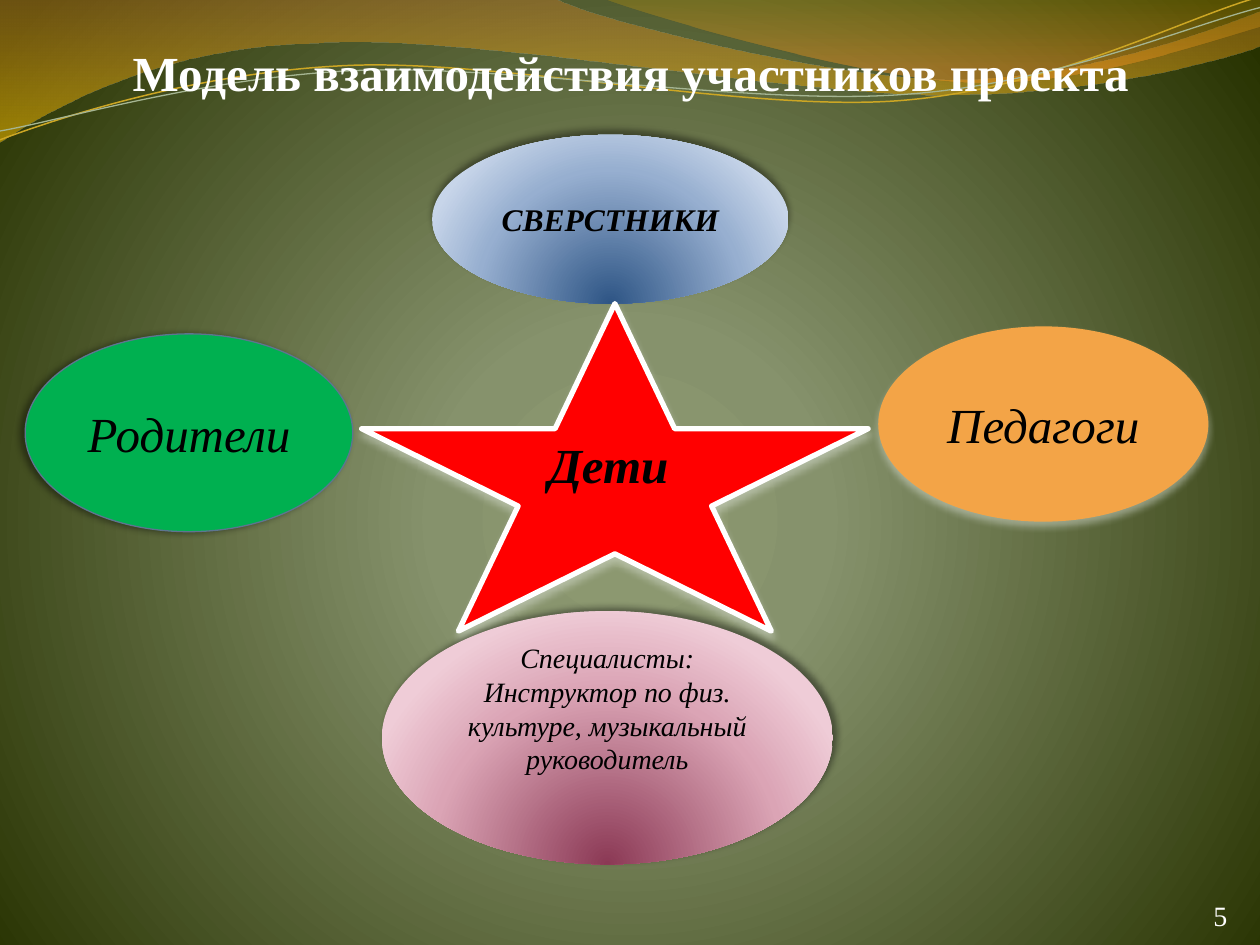
from lxml import etree
from pptx import Presentation
from pptx.dml.color import RGBColor
from pptx.enum import shapes, text
from pptx.oxml.ns import qn
from pptx.util import Inches, Pt

BLACK = RGBColor(0x00, 0x00, 0x00)
WHITE = RGBColor(0xFF, 0xFF, 0xFF)
RED = RGBColor(0xFF, 0x00, 0x00)
GREEN = RGBColor(0x00, 0xB0, 0x50)
ORANGE = RGBColor(0xF3, 0xA4, 0x47)
MIST = RGBColor(0xE0, 0xE6, 0xDC)
SLATE = RGBColor(0x5E, 0x75, 0x90)
GOLD = RGBColor(0xCC, 0xA6, 0x24)
SAGE = RGBColor(0xA5, 0xB5, 0x92)
FONT = "Times New Roman"

# Gradients: stops as (position %, colour, opacity %), then the focus or None
GLOW = (50, 130, 50, -30)
BACKDROP = ([(0, "8F9B72", 100), (25, "86926C", 100), (100, "273200", 100)],
            (10, 110, 10, 100))
BLUE_GLOW = ([(0, "2E5585", 100), (68, "97AFD0", 100), (100, "C7D5E9", 100)], GLOW)
PINK_GLOW = ([(0, "8B3955", 100), (68, "DBA4B5", 100), (100, "EFCCD7", 100)], GLOW)
AMBER = ([(0, "C07A28", 45), (100, "F7BF00", 55)], None)
OLIVE = ([(0, "C09709", 30), (80, "F59320", 45)], None)

# Waves: a start point, then line ends (2 numbers) and Bezier curves (6 numbers)
BANDS = [
    (AMBER, [(0, 0), (4.4, -0.01), (4.76, 0.17, 6.64, 0.63, 7.58, 0.63),
             (8.53, 0.63, 9.58, 0.26, 10, 0.09), (10.01, 0.36),
             (9.83, 0.44, 8.7, 0.76, 7.46, 0.75), (6.22, 0.75, 3.82, 0.28, 2.57, 0.34),
             (1.29, 0.36, 0.46, 0.83, -0.01, 1.13)]),
    (OLIVE, [(4.79, -0.01), (5.09, 0.11, 6.82, 0.62, 7.69, 0.65),
             (8.56, 0.69, 9.61, 0.32, 10, 0.21), (10, 0)]),
]
STRANDS = [
    (GOLD, 0.85, [(0, 1.11), (0.48, 0.93, 1.58, 0.57, 2.77, 0.52),
                  (3.95, 0.47, 5.93, 0.89, 7.13, 0.8), (8.33, 0.71, 9.38, 0.15, 9.98, -0.02)]),
    (SAGE, 0.75, [(0, 1.04), (0.47, 0.96, 1.64, 0.61, 2.83, 0.56),
                  (4.03, 0.51, 5.97, 0.84, 7.17, 0.75), (8.36, 0.67, 9.41, 0.21, 10, 0.06)]),
]

# Participants: shape, place, fill, line, shadow (colour, opacity, blur, angle),
# lines of text, size, bold, anchor, insets (left, top, right, bottom)
OVAL, STAR = shapes.MSO_SHAPE.OVAL, shapes.MSO_SHAPE.STAR_5_POINT
MIDDLE, TOP = text.MSO_ANCHOR.MIDDLE, text.MSO_ANCHOR.TOP
INSETS = (0.1, 0.05, 0.1, 0.05)
PARTICIPANTS = [
    (OVAL, (3.43, 1.07, 2.83, 1.34), BLUE_GLOW, None, (BLACK, 40, 4, 270),
     ["СВЕРСТНИКИ"], 18, True, MIDDLE, INSETS),
    (OVAL, (0.2, 2.65, 2.6, 1.57), GREEN, (SLATE, 0.75), (BLACK, 40, 4, 180),
     ["Родители"], 28, False, MIDDLE, INSETS),
    (OVAL, (6.97, 2.59, 2.62, 1.55), ORANGE, None, (MIST, 48, 4.5, 90),
     ["Педагоги"], 28, False, MIDDLE, INSETS),
    (STAR, (2.87, 2.41, 4.02, 2.6), RED, (WHITE, 3), (MIST, 48, 4.5, 90),
     ["Дети"], 28, True, TOP, (0.1, 0.05, 0.2, 0.05)),
    (OVAL, (3.03, 4.85, 3.58, 2.01), PINK_GLOW, None, (BLACK, 40, 4, 315),
     ["Специалисты:", "Инструктор по физ. культуре, музыкальный руководитель"],
     16, False, MIDDLE, (0.1, 0, 0.1, 0.47)),
]


def add(parent, tag, **attributes):
    child = etree.SubElement(parent, qn(tag))
    for name, value in attributes.items():
        child.set(name, str(value))
    return child


def add_color(parent, color, opacity):
    node = add(parent, "a:srgbClr", val=color)
    if opacity < 100:
        add(node, "a:alpha", val=opacity * 1000)


def set_gradient(fill, owner, gradient):
    stops, focus = gradient
    fill.gradient()
    node = owner.find(".//" + qn("a:gradFill"))
    for child in list(node):
        node.remove(child)
    stop_list = add(node, "a:gsLst")
    for position, color, opacity in stops:
        add_color(add(stop_list, "a:gs", pos=position * 1000), color, opacity)
    if focus:
        sides = {side: edge * 1000 for side, edge in zip("ltrb", focus)}
        add(add(node, "a:path", path="circle"), "a:fillToRect", **sides)
    else:
        add(node, "a:lin", ang=90 * 60000, scaled=0)


def set_fill(shape, fill):
    if isinstance(fill, RGBColor):
        shape.fill.solid()
        shape.fill.fore_color.rgb = fill
    else:
        set_gradient(shape.fill, shape.element, fill)


def set_line(shape, line):
    if line:
        shape.line.color.rgb, shape.line.width = line[0], Pt(line[1])
    else:
        shape.line.fill.background()


def set_shadow(shape, color, opacity, blur, angle):
    effects = shape.element.spPr.find(qn("a:effectLst"))
    shadow = add(effects, "a:outerShdw", blurRad=Pt(blur), dist=Pt(3),
                 dir=angle * 60000, rotWithShape=0)
    add_color(shadow, color, opacity)


def set_text(shape, lines, size, color, bold=False, italic=False,
             anchor=TOP, insets=INSETS):
    frame = shape.text_frame
    frame.text = "\n".join(lines)
    frame.word_wrap, frame.vertical_anchor = True, anchor
    (frame.margin_left, frame.margin_top,
     frame.margin_right, frame.margin_bottom) = map(Inches, insets)
    for para in frame.paragraphs:
        para.alignment = text.PP_ALIGN.CENTER
        for span in para.runs:
            font = span.font
            font.name, font.size, font.color.rgb = FONT, Pt(size), color
            font.bold, font.italic = bold, italic


def add_wave(slide, outline, close):
    """Join the segment ends by lines, then bend the curved segments."""
    ends = [(Inches(segment[-2]), Inches(segment[-1])) for segment in outline]
    builder = slide.shapes.build_freeform(*ends[0])
    builder.add_line_segments(ends[1:], close=close)
    wave = builder.convert_to_shape()
    wave.shadow.inherit = False
    lines = list(wave.element.iter(qn("a:lnTo")))
    for line, segment in zip(lines, outline[1:]):
        if len(segment) == 6:
            line.tag = qn("a:cubicBezTo")
            handles = [etree.Element(qn("a:pt"), x=str(Inches(x) - wave.left),
                                     y=str(Inches(y) - wave.top))
                       for x, y in (segment[:2], segment[2:4])]
            line[:0] = handles
    return wave


def main():
    deck = Presentation()
    deck.slide_width, deck.slide_height = Inches(10), Inches(7.5)
    slide = deck.slides.add_slide(deck.slide_layouts[6])
    set_gradient(slide.background.fill, slide.element, BACKDROP)

    # Waves along the top
    for gradient, outline in BANDS:
        band = add_wave(slide, outline, close=True)
        set_fill(band, gradient)
        set_line(band, None)
    for color, width, outline in STRANDS:
        strand = add_wave(slide, outline, close=False)
        strand.fill.background()
        set_line(strand, (color, width))

    # Title
    title = slide.shapes.add_textbox(*map(Inches, (0.75, 0.29, 8.59, 0.71)))
    set_text(title, ["Модель взаимодействия участников проекта"], 28, WHITE,
             bold=True, insets=(0, 0.05, 0.08, 0.05))
    title.text_frame.paragraphs[0].space_before = Pt(3)

    # Participants around the star
    for kind, place, fill, line, shadow, lines, size, bold, anchor, insets in PARTICIPANTS:
        shape = slide.shapes.add_shape(kind, *map(Inches, place))
        shape.shadow.inherit = False
        set_fill(shape, fill)
        set_line(shape, line)
        set_shadow(shape, *shadow)
        set_text(shape, lines, size, BLACK, bold, True, anchor, insets)

    # Page number
    number = slide.shapes.add_textbox(*map(Inches, (9.41, 7.08, 0.55, 0.37)))
    set_text(number, ["5"], 16, WHITE)

    deck.save("out.pptx")


if __name__ == "__main__":
    main()
